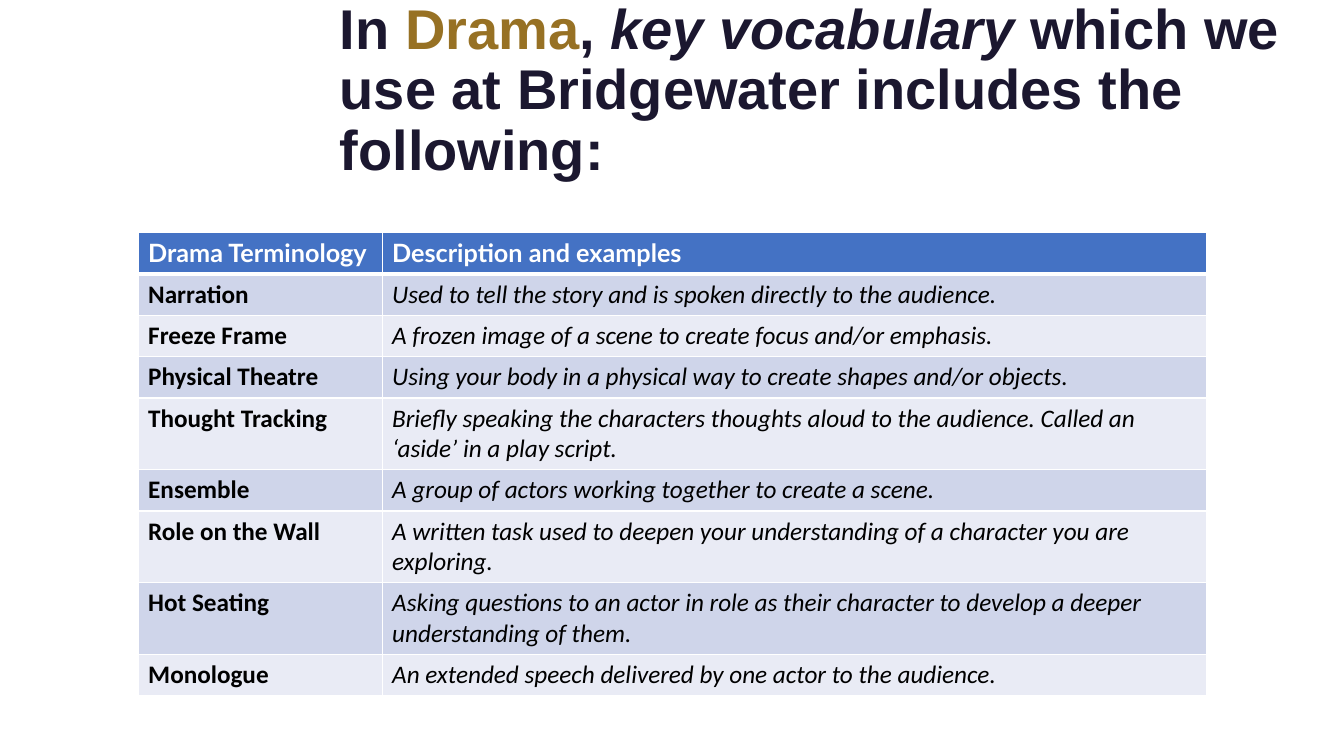
from lxml import etree
from pptx import Presentation
from pptx.dml.color import RGBColor
from pptx.enum.text import MSO_ANCHOR, MSO_AUTO_SIZE, PP_ALIGN
from pptx.oxml.ns import qn
from pptx.util import Inches, Pt

BOTTOM = MSO_ANCHOR.BOTTOM
NO_AUTOFIT = MSO_AUTO_SIZE.NONE
LEFT = PP_ALIGN.LEFT
TITLE_ONLY = 5

NAVY = RGBColor(0x1B, 0x17, 0x2F)
GOLD = RGBColor(0x97, 0x71, 0x24)
WHITE = RGBColor(0xFF, 0xFF, 0xFF)
BLACK = RGBColor(0x00, 0x00, 0x00)
HEADER_BLUE = RGBColor(0x44, 0x72, 0xC4)
BANDS = (RGBColor(0xCF, 0xD5, 0xEA), RGBColor(0xE9, 0xEB, 0xF5))

HEADINGS = ("Drama Terminology", "Description and examples")
TERMS = [
    ("Narration", "Used to tell the story and is spoken directly to the audience."),
    ("Freeze Frame", "A frozen image of a scene to create focus and/or emphasis."),
    ("Physical Theatre",
     "Using your body in a physical way to create shapes and/or objects."),
    ("Thought Tracking",
     "Briefly speaking the characters thoughts aloud to the audience. "
     "Called an ‘aside’ in a play script."),
    ("Ensemble", "A group of actors working together to create a scene."),
    ("Role on the Wall",
     "A written task used to deepen your understanding of a character "
     "you are exploring."),
    ("Hot Seating",
     "Asking questions to an actor in role as their character to develop "
     "a deeper understanding of them."),
    ("Monologue", "An extended speech delivered by one actor to the audience."),
]


def add_text(p, text, font="Calibri", size=18, color=BLACK, bold=False, italic=False):
    r = p.add_run()
    r.text = text
    r.font.name = font
    r.font.size = Pt(size)
    r.font.color.rgb = color
    r.font.bold = bold
    r.font.italic = italic


def set_borders(cell, **widths):
    """Draw white cell borders; widths in points, keyed by side."""
    tcPr = cell._tc.get_or_add_tcPr()
    for i, (side, width) in enumerate(widths.items()):
        ln = etree.Element(qn(f"a:ln{side}"), w=str(Pt(width)))
        fill = etree.SubElement(ln, qn("a:solidFill"))
        etree.SubElement(fill, qn("a:srgbClr"), val=str(WHITE))
        tcPr.insert(i, ln)


def build_title(s, x, y, w, h):
    sp = s.shapes.title
    sp.left, sp.top, sp.width, sp.height = (Inches(v) for v in (x, y, w, h))
    tf = sp.text_frame
    tf.word_wrap = True
    tf.auto_size = NO_AUTOFIT
    tf.vertical_anchor = BOTTOM
    p = tf.paragraphs[0]
    p.alignment = LEFT
    p.line_spacing = 0.9
    for text, color, italic in (
        ("In ", NAVY, False),
        ("Drama", GOLD, False),
        (", ", NAVY, False),
        ("key vocabulary ", NAVY, True),
        ("which we use at Bridgewater includes the following:", NAVY, False),
    ):
        add_text(p, text, font="Arial", size=40, color=color, bold=True, italic=italic)


def build_vocabulary(s, x, y, col_widths, row_height):
    rows = [HEADINGS] + TERMS
    table = s.shapes.add_table(
        len(rows), len(col_widths), Inches(x), Inches(y),
        Inches(sum(col_widths)), Inches(row_height * len(rows))).table
    for column, width in zip(table.columns, col_widths):
        column.width = Inches(width)

    for i, row in enumerate(rows):
        table.rows[i].height = Inches(row_height)
        for j, text in enumerate(row):
            cell = table.cell(i, j)
            p = cell.text_frame.paragraphs[0]
            cell.fill.solid()
            if i == 0:
                cell.fill.fore_color.rgb = HEADER_BLUE
                add_text(p, text, font="Lato", color=WHITE, bold=True)
            else:
                cell.fill.fore_color.rgb = BANDS[(i - 1) % 2]
                add_text(p, text, bold=j == 0, italic=j == 1)
            # Heavier rule between the header and the terms
            set_borders(cell, L=1, R=1, T=3 if i == 1 else 1, B=3 if i == 0 else 1)


def main():
    prs = Presentation()
    prs.slide_width, prs.slide_height = Inches(13.33), Inches(7.5)
    s = prs.slides.add_slide(prs.slide_layouts[TITLE_ONLY])
    build_title(s, 3.27, 0.21, 10.37, 1.65)
    build_vocabulary(s, 1.37, 2.31, (2.42, 8.18), 0.41)
    prs.save("out.pptx")


if __name__ == "__main__":
    main()
